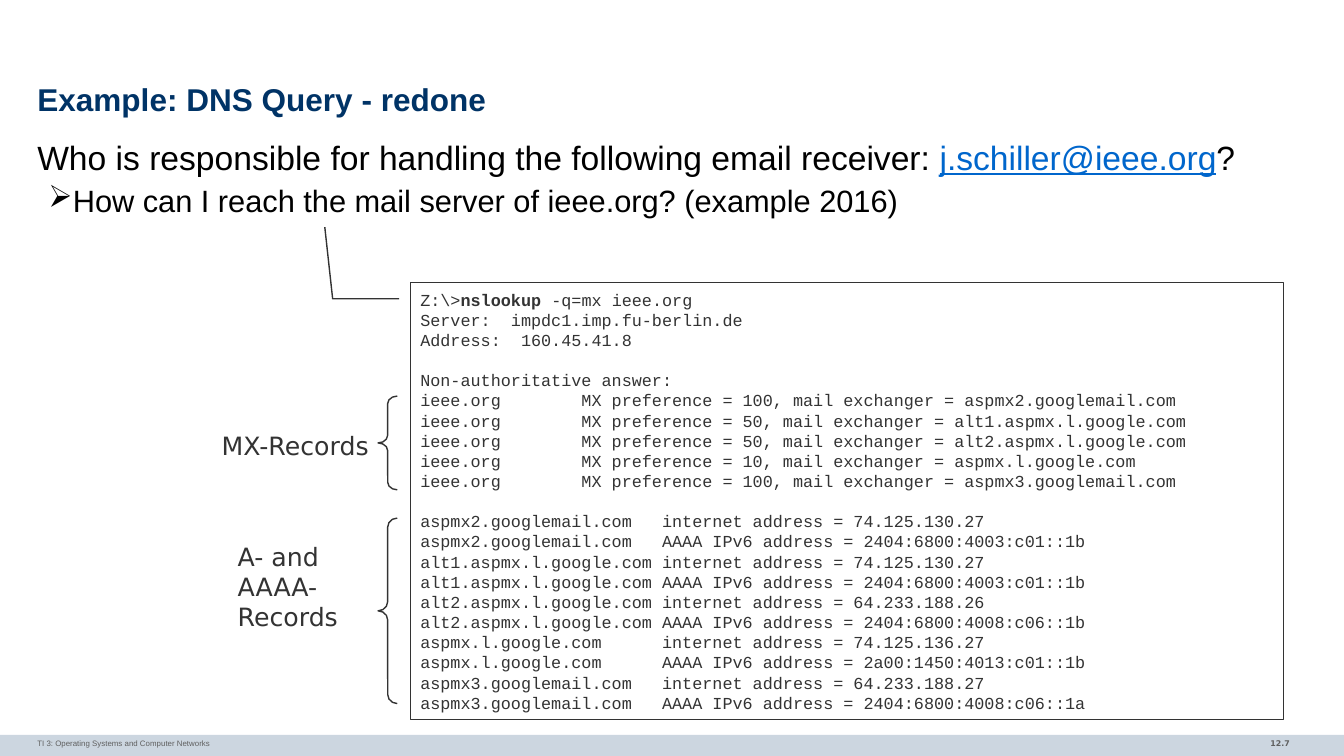
from dataclasses import dataclass

from lxml import etree
from pptx import Presentation
from pptx import util as u
from pptx.dml.color import RGBColor
from pptx.enum import shapes, text
from pptx.oxml.ns import qn


@dataclass(frozen=True)
class Theme:
    title: dict
    question: dict
    email: dict
    answer: dict
    label: dict
    code: dict
    footer: dict
    number: dict
    ink: str = "333333"
    strip: str = "CCD6E0"


def style(name, size, color, **extra):
    return {"name": name, "size": u.Pt(size), "color": color, **extra}


THEME = Theme(
    title=style("Arial", 22.5, "003366", bold=True),
    question=style("Arial", 24, "000000"),
    email=style("Arial", 24, "0066CC", underline=True),
    answer=style("Arial", 22, "000000"),
    label=style("DejaVu Sans", 18, "333333"),
    code=style("Courier New", 12, "333333"),
    footer=style("Arial", 5.6, "5F5F5F"),
    number=style("DejaVu Sans", 5.6, "5F5F5F", bold=True),
)
CODE_PITCH = u.Pt(14.4)

MX_RECORDS = [
    (100, "aspmx2.googlemail.com"),
    (50, "alt1.aspmx.l.google.com"),
    (50, "alt2.aspmx.l.google.com"),
    (10, "aspmx.l.google.com"),
    (100, "aspmx3.googlemail.com"),
]
ADDRESSES = [
    ("aspmx2.googlemail.com", "74.125.130.27", "2404:6800:4003:c01::1b"),
    ("alt1.aspmx.l.google.com", "74.125.130.27", "2404:6800:4003:c01::1b"),
    ("alt2.aspmx.l.google.com", "64.233.188.26", "2404:6800:4008:c06::1b"),
    ("aspmx.l.google.com", "74.125.136.27", "2a00:1450:4013:c01::1b"),
    ("aspmx3.googlemail.com", "64.233.188.27", "2404:6800:4008:c06::1a"),
]


def set_all(target, values):
    for name, value in values.items():
        setattr(target, name, value)


def add_span(para, words, font):
    span = para.add_run()
    span.text = words
    set_all(span.font, {key: value for key, value in font.items() if key != "color"})
    span.font.color.rgb = RGBColor.from_string(font["color"])


def add_para(frame, spans, **layout):
    first = frame.paragraphs[0]
    para = frame.add_paragraph() if first.runs else first
    set_all(para, layout)
    for words, font in spans:
        add_span(para, words, font)
    return para


def add_text(page, place, insets=(0.1, 0.05), wrap=True, anchor=text.MSO_ANCHOR.TOP):
    frame = page.shapes.add_textbox(*map(u.Inches, place)).text_frame
    side, edge = map(u.Inches, insets)
    set_all(frame, {"margin_left": side, "margin_right": side, "margin_top": edge,
                    "margin_bottom": edge, "word_wrap": wrap, "vertical_anchor": anchor})
    return frame


def add_outline(page, kind, place, adjustments):
    shape = page.shapes.add_shape(kind, *map(u.Inches, place))
    shape.shadow.inherit = False
    shape.fill.background()
    shape.line.color.rgb = RGBColor.from_string(THEME.ink)
    shape.line.width = u.Pt(1)
    for index, value in enumerate(adjustments):
        shape.adjustments[index] = value
    return shape


def add_bullet(para, mark, left, hanging):
    props = para._p.get_or_add_pPr()
    props.set("marL", str(u.Inches(left)))
    props.set("indent", str(-u.Inches(hanging)))
    etree.SubElement(props, qn("a:buChar")).set("char", mark)


def add_label(page, place, lines):
    frame = add_text(page, place, wrap=False)
    for line in lines:
        add_para(frame, [(line, THEME.label)])


def add_heading(page):
    title = add_text(page, (0.37, 0.78, 12.6, 0.47), (0, 0), anchor=text.MSO_ANCHOR.MIDDLE)
    add_para(title, [("Example: DNS Query - redone", THEME.title)], line_spacing=0.85)
    body = add_text(page, (0.37, 1.35, 12.6, 1), (0, 0))
    add_para(body, [
        ("Who is responsible for handling the following email receiver: ", THEME.question),
        ("j.schiller@ieee.org", THEME.email),
        ("?", THEME.question),
    ], line_spacing=1.02)
    answer = add_para(body, [
        ("How can I reach the mail server of ieee.org? (example 2016)", THEME.answer),
    ], line_spacing=1.02, space_before=u.Pt(2.8))
    add_bullet(answer, "➢", 0.22, 0.11)


def add_query_output(page):
    callout = add_outline(page, shapes.MSO_SHAPE.LINE_CALLOUT_2, (4.07, 2.8, 8.66, 4.34),
                          (0.038, -0.013, 0.038, -0.089, -0.126, -0.098))
    frame = callout.text_frame
    set_all(frame, {"word_wrap": True, "vertical_anchor": text.MSO_ANCHOR.MIDDLE})
    code = THEME.code
    command = [("Z:\\>", code), ("nslookup", {**code, "bold": True}), (" -q=mx ieee.org", code)]
    server = ["Server:  impdc1.imp.fu-berlin.de", "Address:  160.45.41.8"]
    answer = ["Non-authoritative answer:"]
    answer += [f"{'ieee.org':<16}MX preference = {rank}, mail exchanger = {host}"
               for rank, host in MX_RECORDS]
    addresses = [f"{host:<24}{kind} address = {value}"
                 for host, ipv4, ipv6 in ADDRESSES
                 for kind, value in (("internet", ipv4), ("AAAA IPv6", ipv6))]
    layout = {"alignment": text.PP_ALIGN.LEFT, "line_spacing": CODE_PITCH}
    add_para(frame, command, **layout)
    for block, gap in ((server, u.Pt(0)), (answer, CODE_PITCH), (addresses, CODE_PITCH)):
        for index, line in enumerate(block):
            add_para(frame, [(line, code)], **layout,
                     space_before=u.Pt(0) if index else gap)


def add_footer(page):
    strip = page.shapes.add_shape(shapes.MSO_SHAPE.RECTANGLE,
                                  *map(u.Inches, (0, 7.29, 13.33, 0.21)))
    strip.shadow.inherit = False
    strip.fill.solid()
    strip.fill.fore_color.rgb = RGBColor.from_string(THEME.strip)
    strip.line.fill.background()
    number = add_text(page, (11.1, 7.28, 1.79, 0.23))
    add_para(number, [("12.7", THEME.number)], alignment=text.PP_ALIGN.RIGHT)
    course = add_text(page, (0.37, 7.28, 8.72, 0.22), (0, 0.05))
    add_para(course, [("TI 3: Operating Systems and Computer Networks", THEME.footer)])


def main():
    deck = Presentation()
    set_all(deck, {"slide_width": u.Inches(13.33), "slide_height": u.Inches(7.5)})
    page = deck.slides.add_slide(deck.slide_layouts[6])
    add_footer(page)
    add_heading(page)
    add_label(page, (2.26, 5.32, 1.2, 1.01), ["A- and", "AAAA-", "Records"])
    add_label(page, (2.1, 4.22, 1.69, 0.4), ["MX-Records"])
    for top, height, curve in ((5.14, 1.84, 0.475), (3.93, 0.93, 0.397)):
        add_outline(page, shapes.MSO_SHAPE.LEFT_BRACE, (3.75, top, 0.19, height), (curve, 0.5))
    add_query_output(page)
    deck.save("out.pptx")


if __name__ == "__main__":
    main()
